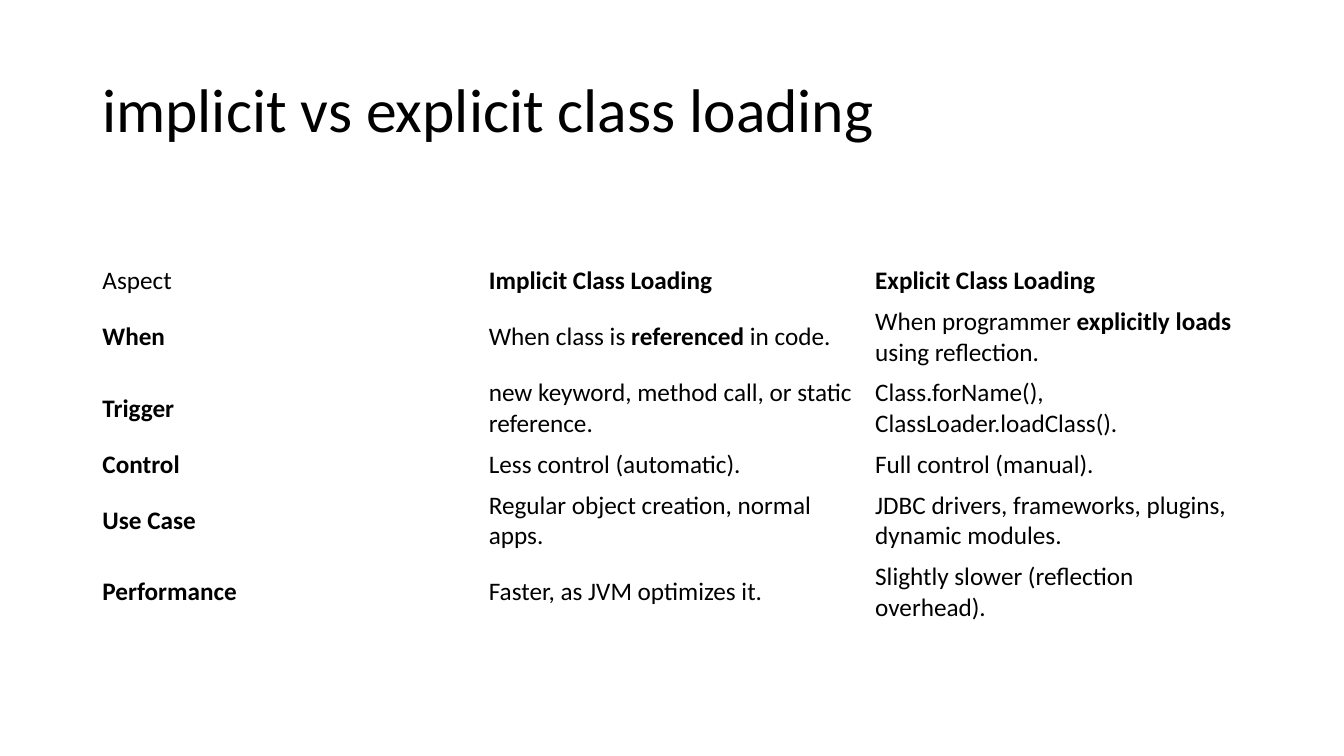
from pptx import Presentation, util as u
from pptx.dml.color import RGBColor
from pptx.enum import text

PX = u.Inches(1) // 96
THEME = {
    "font": "Calibri",
    "ink": RGBColor(0, 0, 0),
    "paper": RGBColor(255, 255, 255),
    "title": u.Pt(44),
    "body": u.Pt(18),
}


def write(frame, content, size=THEME["body"], spacing=None):
    """Fill a text frame; words between ** marks are bold."""
    frame.word_wrap = True
    para = frame.paragraphs[0]
    para.alignment = text.PP_ALIGN.LEFT
    if spacing:
        para.line_spacing = spacing
    for index, part in enumerate(content.split("**")):
        if part:
            span = para.add_run()
            span.text = part
            span.font.name = THEME["font"]
            span.font.size = size
            span.font.bold = index % 2 == 1
            span.font.color.rgb = THEME["ink"]


# Page
deck = Presentation()
deck.slide_width, deck.slide_height = 1280 * PX, 720 * PX
page = deck.slides.add_slide(deck.slide_layouts[6])
page.background.fill.solid()
page.background.fill.fore_color.rgb = THEME["paper"]

# Title
LEFT, WIDTH = 88 * PX, 1104 * PX
box = page.shapes.add_textbox(LEFT, 38 * PX, WIDTH, 139 * PX)
box.text_frame.vertical_anchor = text.MSO_ANCHOR.MIDDLE
write(box.text_frame, "implicit vs explicit class loading", size=THEME["title"], spacing=0.9)

# Comparison rows, each with the number of text lines it holds
ROWS = [
    (1, "Aspect", "**Implicit Class Loading**", "**Explicit Class Loading**"),
    (2, "**When**", "When class is **referenced** in code.",
     "When programmer **explicitly loads** using reflection."),
    (2, "**Trigger**", "new keyword, method call, or static reference.",
     "Class.forName(), ClassLoader.loadClass()."),
    (1, "**Control**", "Less control (automatic).", "Full control (manual)."),
    (2, "**Use Case**", "Regular object creation, normal apps.",
     "JDBC drivers, frameworks, plugins, dynamic modules."),
    (2, "**Performance**", "Faster, as JVM optimizes it.",
     "Slightly slower (reflection overhead)."),
]
ROW_HEIGHT = {1: 39 * PX, 2: 68 * PX}

# Table
height = sum(ROW_HEIGHT[lines] for lines, *_ in ROWS)
table = page.shapes.add_table(len(ROWS), 3, LEFT, 248 * PX, WIDTH, height).table
table.first_row = table.horz_banding = False
for row, (lines, *contents) in zip(table.rows, ROWS):
    row.height = ROW_HEIGHT[lines]
    for cell, content in zip(row.cells, contents):
        cell.fill.background()
        cell.vertical_anchor = text.MSO_ANCHOR.MIDDLE
        write(cell.text_frame, content)

deck.save("out.pptx")
